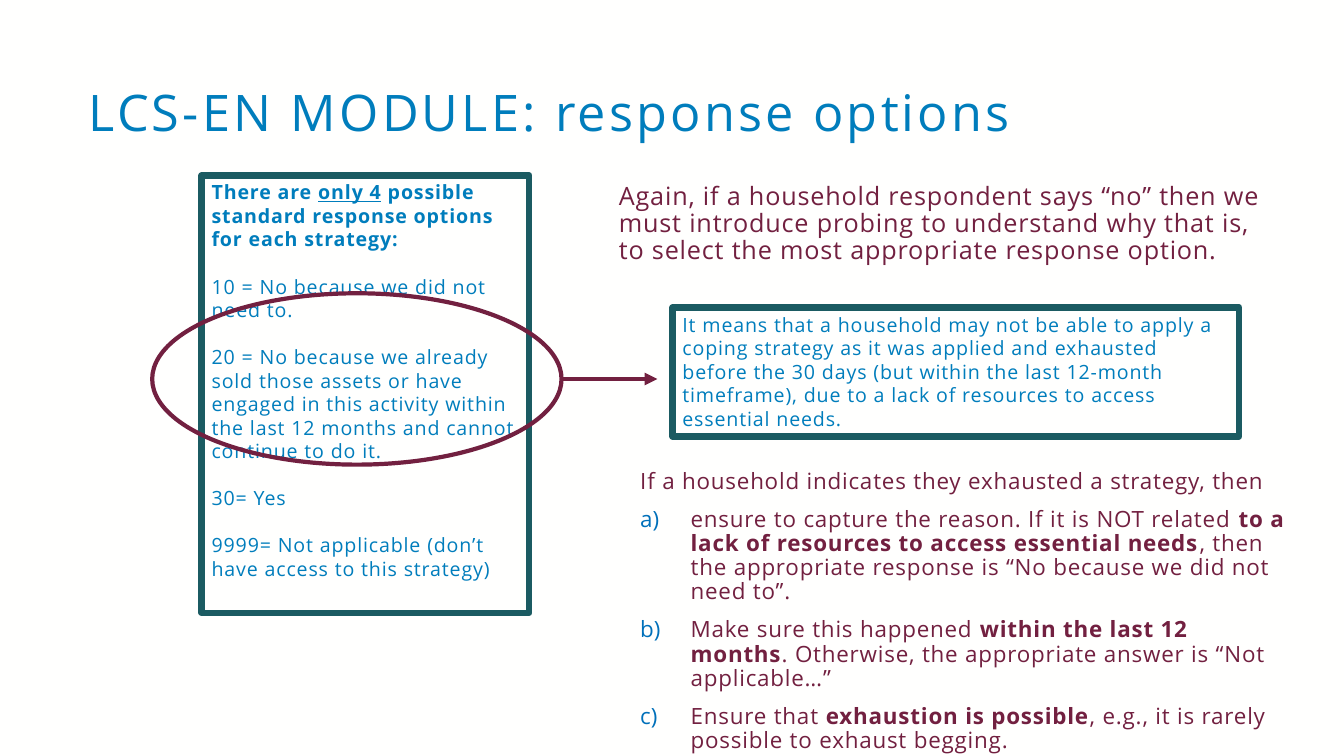
from lxml.etree import SubElement
from pptx import Presentation
from pptx.dml.color import RGBColor
from pptx.enum.shapes import MSO_CONNECTOR, MSO_SHAPE
from pptx.enum.text import MSO_ANCHOR, MSO_AUTO_SIZE, PP_ALIGN
from pptx.oxml.ns import qn
from pptx.util import Inches, Pt

COLORS = {"background": "FFFFFE", "blue": "007DBC", "marker": "0070BA",
          "teal": "1B5B62", "plum": "722040"}
FONT = "Open Sans"

# Each paragraph is a list of (text, style) pairs; style is "", "b" or "bu"
RESPONSE_OPTIONS = [
    [("There are ", "b"), ("only 4", "bu"),
     (" possible standard response options for each strategy:", "b")],
    [("10 = No because we did not need to.", "")],
    [("20 = No because we already sold those assets or have engaged in this "
      "activity within the last 12 months and cannot continue to do it.", "")],
    [("30= Yes", "")],
    [("9999= Not applicable (don’t have access to this strategy)", "")],
]
EXHAUSTED_MEANING = [
    [("It means that a household may not be able to apply a coping strategy as it "
      "was applied and exhausted before the 30 days (but within the last 12-month "
      "timeframe), due to a lack of resources to access essential needs.", "")],
]
PROBING_ADVICE = [
    [("Again, if a household respondent says “no” then we must introduce probing "
      "to understand why that is, to select the most appropriate response option.", "")],
]
EXHAUSTION_CHECKS = [
    [("If a household indicates they exhausted a strategy, then", "")],
    [("ensure to capture the reason. If it is NOT related ", ""),
     ("to a lack of resources to access essential needs", "b"),
     (", then the appropriate response is “No because we did not need to”.", "")],
    [("Make sure this happened ", ""), ("within the last 12 months", "b"),
     (". Otherwise, the appropriate answer is “Not applicable…”", "")],
    [("Ensure that ", ""), ("exhaustion is possible", "b"),
     (", e.g., it is rarely possible to exhaust begging.", "")],
]


def rgb(name):
    return RGBColor.from_string(COLORS[name])


def place(part, left, top, width, height):
    part.left, part.top = Inches(left), Inches(top)
    part.width, part.height = Inches(width), Inches(height)


def format_run(run, size, color, spacing, style=""):
    run.font.name = FONT
    run.font.size = Pt(size)
    run.font.color.rgb = rgb(color)
    run.font.bold = "b" in style
    run.font.underline = "u" in style
    run.font._element.set("spc", str(round(spacing * 100)))


def write_paragraphs(frame, paragraphs, size, color, gap=0, line_spacing=1.0):
    frame.word_wrap = True
    frame.auto_size = MSO_AUTO_SIZE.NONE
    frame.vertical_anchor = MSO_ANCHOR.TOP
    for index, pieces in enumerate(paragraphs):
        paragraph = frame.add_paragraph() if index else frame.paragraphs[0]
        paragraph.alignment = PP_ALIGN.LEFT
        paragraph.line_spacing = line_spacing
        paragraph.space_before = Pt(gap if index else 0)
        for text, style in pieces:
            run = paragraph.add_run()
            run.text = text
            format_run(run, size, color, 0.6, style)


def set_marker(paragraph, lettered):
    properties = paragraph._p.get_or_add_pPr()
    hanging = Inches(0.5) if lettered else 0
    properties.set("marL", str(hanging))
    properties.set("indent", str(-hanging))
    if lettered:
        marker_color = SubElement(properties, qn("a:buClr"))
        SubElement(marker_color, qn("a:srgbClr"), val=COLORS["marker"])
        SubElement(properties, qn("a:buFont"), typeface="+mj-lt")
        SubElement(properties, qn("a:buAutoNum"), type="alphaLcParenR")
    else:
        SubElement(properties, qn("a:buNone"))


def add_outline(slide, kind, bounds, color, weight):
    outline = slide.shapes.add_shape(kind, *map(Inches, bounds))
    outline.shadow.inherit = False
    outline.fill.background()
    outline.line.color.rgb = rgb(color)
    outline.line.width = Pt(weight)
    return outline


def add_framed_text(slide, bounds, paragraphs, gap=0):
    frame = add_outline(slide, MSO_SHAPE.RECTANGLE, bounds, "teal", 4.5)
    write_paragraphs(frame.text_frame, paragraphs, 14, "blue", gap)


def add_arrow(slide, start, end, color, weight):
    arrow = slide.shapes.add_connector(
        MSO_CONNECTOR.STRAIGHT, *map(Inches, (*start, *end)))
    arrow.line.color.rgb = rgb(color)
    arrow.line.width = Pt(weight)
    SubElement(arrow.line._get_or_add_ln(), qn("a:tailEnd"), type="triangle")
    SubElement(arrow._element.spPr, qn("a:effectLst"))


def write_title(title):
    place(title, 0.78, 0.78, 12.09, 0.72)
    title.text_frame.text = "LCS-EN MODULE: response options"
    title.text_frame.auto_size = MSO_AUTO_SIZE.NONE
    title.text_frame.vertical_anchor = MSO_ANCHOR.MIDDLE
    heading = title.text_frame.paragraphs[0]
    heading.alignment = PP_ALIGN.LEFT
    heading.line_spacing = 0.9
    format_run(heading.runs[0], 36, "blue", 2.3)


def write_checks(checks):
    place(checks, 6.25, 4.61, 6.67, 2.95)
    write_paragraphs(checks.text_frame, EXHAUSTION_CHECKS, 16, "plum", 10, 0.9)
    for index, paragraph in enumerate(checks.text_frame.paragraphs):
        set_marker(paragraph, lettered=index > 0)


def main():
    deck = Presentation()
    deck.slide_width, deck.slide_height = Inches(13.33), Inches(7.5)
    slide = deck.slides.add_slide(deck.slide_layouts[1])
    slide.background.fill.solid()
    slide.background.fill.fore_color.rgb = rgb("background")

    write_title(slide.shapes.title)

    # Response options and the meaning of code 20
    add_framed_text(slide, (2, 1.74, 3.25, 4.34), RESPONSE_OPTIONS, gap=16.8)
    add_framed_text(slide, (6.67, 3.05, 5.62, 1.28), EXHAUSTED_MEANING)
    add_outline(slide, MSO_SHAPE.OVAL, (1.51, 2.91, 4.06, 1.7), "plum", 3)
    add_arrow(slide, (5.56, 3.76), (6.52, 3.76), "plum", 3)

    # Guidance for the interviewer
    advice = slide.shapes.add_textbox(*map(Inches, (6.04, 1.77, 6.67, 0.92)))
    write_paragraphs(advice.text_frame, PROBING_ADVICE, 18, "plum", line_spacing=0.9)
    write_checks(slide.placeholders[1])

    deck.save("out.pptx")


if __name__ == "__main__":
    main()
